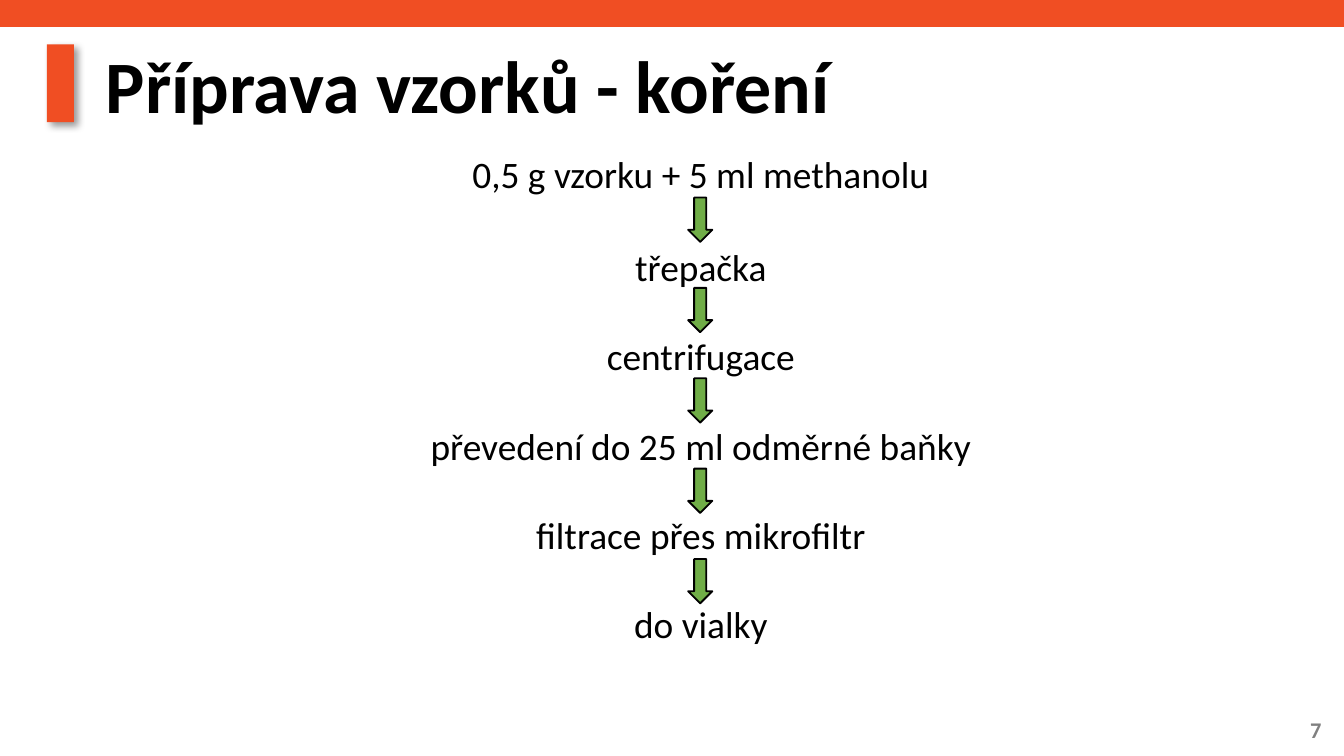
from dataclasses import dataclass

from lxml import etree
from pptx import Presentation
from pptx.dml.color import RGBColor
from pptx.enum.shapes import MSO_SHAPE
from pptx.enum.text import MSO_ANCHOR, PP_ALIGN
from pptx.oxml.ns import qn
from pptx.util import Inches, Pt

RECT, ARROW = MSO_SHAPE.RECTANGLE, MSO_SHAPE.DOWN_ARROW
TOP, MIDDLE = MSO_ANCHOR.TOP, MSO_ANCHOR.MIDDLE
LEFT, CENTER, RIGHT = PP_ALIGN.LEFT, PP_ALIGN.CENTER, PP_ALIGN.RIGHT

TITLE = "Příprava vzorků - koření"
STEPS = [
    "0,5 g vzorku + 5 ml methanolu",
    "třepačka",
    "centrifugace",
    "převedení do 25 ml odměrné baňky",
    "filtrace přes mikrofiltr",
    "do vialky",
]
PAGE = "7"


@dataclass
class Theme:
    font: str = "Calibri"
    orange: str = "F04E23"
    green: str = "70AD47"
    black: str = "000000"
    gray: str = "808080"
    title: float = 39.6
    body: float = 20
    page: float = 12


theme = Theme()


def add_block(slide, kind, box, fill, line=None):
    shape = slide.shapes.add_shape(kind, *map(Inches, box))
    shape.shadow.inherit = False
    shape.fill.solid()
    shape.fill.fore_color.rgb = RGBColor.from_string(fill)
    if line:
        shape.line.color.rgb = RGBColor.from_string(line)
        shape.line.width = Pt(1)
    else:
        shape.line.fill.background()
    return shape


def add_shadow(shape):
    effects = shape.element.spPr.find(qn("a:effectLst"))
    outer = etree.SubElement(
        effects, qn("a:outerShdw"), blurRad=str(Pt(4)), dist=str(Pt(3)),
        dir=str(45 * 60000), algn="tl", rotWithShape="0")
    color = etree.SubElement(outer, qn("a:srgbClr"), val=theme.black)
    etree.SubElement(color, qn("a:alpha"), val="40000")


def add_text(slide, box, lines, size, color, align, anchor, bold=False,
             spacing=1.0, gaps=()):
    frame = slide.shapes.add_textbox(*map(Inches, box)).text_frame
    frame.word_wrap = True
    frame.vertical_anchor = anchor
    for i, text in enumerate(lines):
        par = frame.add_paragraph() if i else frame.paragraphs[0]
        par.alignment = align
        par.line_spacing = spacing
        if i:
            par.space_before = Pt(gaps[i - 1])
        run = par.add_run()
        run.text = text
        run.font.name = theme.font
        run.font.size = Pt(size)
        run.font.bold = bold
        run.font.color.rgb = RGBColor.from_string(color)


def main():
    deck = Presentation()
    deck.slide_width = Inches(10)
    deck.slide_height = deck.slide_width * 9 // 16
    slide = deck.slides.add_slide(deck.slide_layouts[6])

    add_block(slide, RECT, (0, 0, 10, 0.2), theme.orange)
    add_shadow(add_block(slide, RECT, (0.35, 0.33, 0.2, 0.58), theme.orange))
    add_text(slide, (9.25, 5.28, 0.68, 0.3), [PAGE], theme.page, theme.gray,
             RIGHT, MIDDLE, bold=True)

    left, width = 0.69, 9.05
    add_text(slide, (left, 0.3, width, 0.74), [TITLE], theme.title,
             theme.black, LEFT, MIDDLE, bold=True, spacing=0.9)
    gaps = [23.5] + [21.5] * (len(STEPS) - 2)
    add_text(slide, (left, 1.04, width, 4.48), STEPS, theme.body, theme.black,
             CENTER, TOP, spacing=1.1, gaps=gaps)

    count = len(STEPS) - 1
    first, last = 1.47, 4.16
    pitch = (last - first) / (count - 1)
    for i in range(count):
        add_block(slide, ARROW, (5.12, first + i * pitch, 0.18, 0.33),
                  theme.green, theme.black)

    deck.save("out.pptx")


if __name__ == "__main__":
    main()
